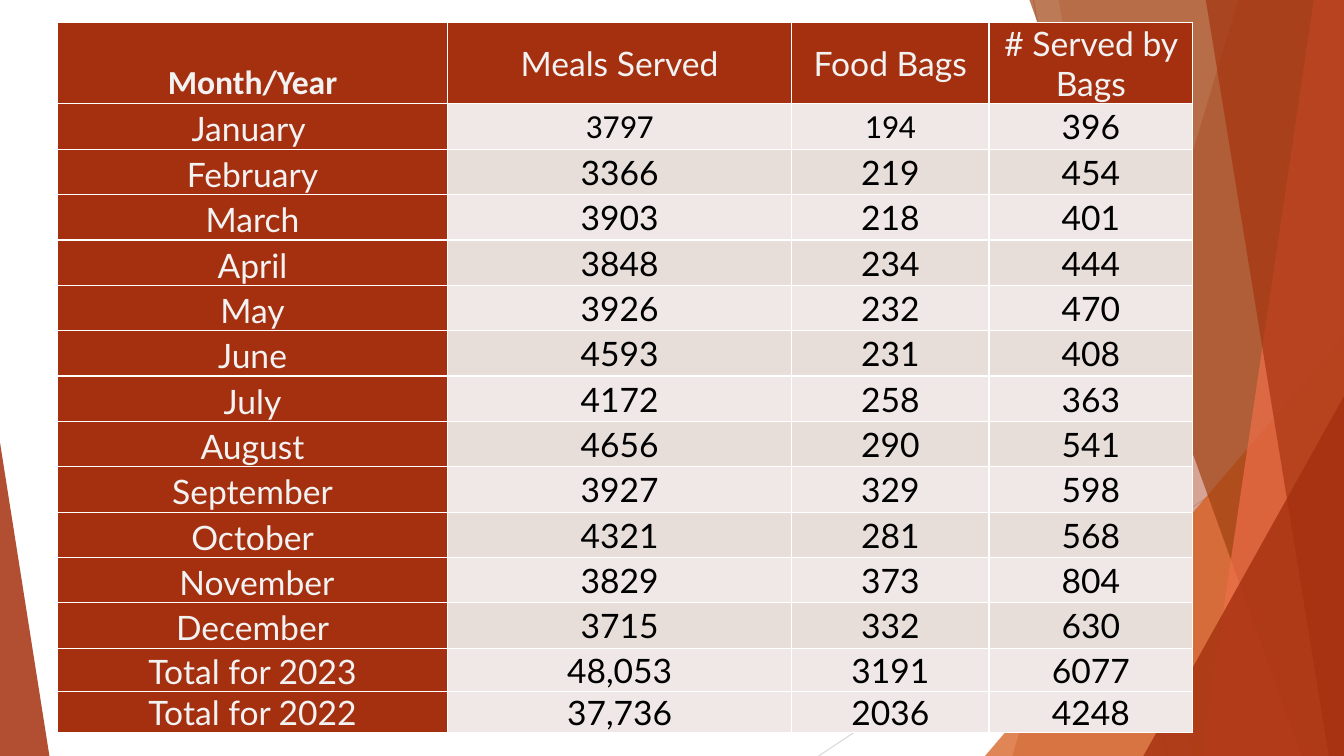
from lxml import etree
from pptx import Presentation
from pptx.dml.color import RGBColor
from pptx.enum.shapes import MSO_CONNECTOR, MSO_SHAPE
from pptx.enum.text import MSO_ANCHOR, PP_ALIGN
from pptx.oxml.ns import qn
from pptx.util import Inches, Pt

STRAIGHT, TRIANGLE = MSO_CONNECTOR.STRAIGHT, MSO_SHAPE.ISOSCELES_TRIANGLE
CENTER = PP_ALIGN.CENTER
BOTTOM, MIDDLE = MSO_ANCHOR.BOTTOM, MSO_ANCHOR.MIDDLE

# Content
HEADERS = ("Month/Year", "Meals Served", "Food Bags", "# Served by Bags")
MONTHS = [
    ("January ", "3797", "194", "396"),
    ("February", "3366", "219", "454"),
    ("March", "3903", "218", "401"),
    ("April", "3848", "234", "444"),
    ("May", "3926", "232", "470"),
    ("June", "4593", "231", "408"),
    ("July", "4172", "258", "363"),
    ("August", "4656", "290", "541"),
    ("September", "3927", "329", "598"),
    ("October", "4321", "281", "568"),
    (" November", "3829", "373", "804"),
    ("December", "3715", "332", "630"),
]
TOTALS = [
    ("Total for 2023", "48,053", "3191", "6077"),
    ("Total for 2022", "37,736", "2036", "4248"),
]
CALIBRI_CELLS = {"Month/Year", "3797", "194"}

THEME = {
    "rust": "A5300F", "orange": "D55816", "brown": "A04210", "coral": "EE6E4A",
    "light": "F2F2F2", "dark": "000000", "border": "FFFFFF",
    "bands": ("F0E8E7", "E7DEDA"),
    "font": "Lato", "accent_font": "Calibri", "size": 24,
}

# Layout in inches
WIDTH, HEIGHT = 13.33, 7.5
TABLE_LEFT, TABLE_TOP = 0.57, 0.22
COLUMN_WIDTHS = (3.87, 3.41, 1.96, 2.02)
ROW_HEIGHTS = [0.74] + [0.45] * len(MONTHS) + [0.43, 0.22]
INSETS = {"margin_left": 0.01, "margin_top": 0.01, "margin_right": 0.01, "margin_bottom": 0}

# Background: thin lines, then facets from back to front
LINES = [((10.25, 0), (11.58, HEIGHT), "BFBFBF"),
         ((WIDTH, 4.03), (8.12, HEIGHT), "D9D9D9")]
# Right-edge facets: (top x, bottom x); triangles: (left, top, width, apex)
FACETS = [
    ("band", (12.28, 10.04), "rust", 30),
    ("band", (10.5, 11.83), "rust", 20),
    ("triangle", (9.77, 3.33, 3.56, 1), "orange", 72),
    ("band", (10.21, 12.91), "brown", 70),
    ("band", (13.03, 11.92), "coral", 70),
    ("band", (11.96, 13.18), "rust", 65),
    ("triangle", (11.34, 3.93, 1.99, 1), "rust", 80),
    ("triangle", (0, 4.39, 0.49, 0), "rust", 85),
]


def color(name):
    return RGBColor.from_string(THEME.get(name, name))


def add_line(slide, start, end, line_color):
    points = [Inches(value) for value in (*start, *end)]
    line = slide.shapes.add_connector(STRAIGHT, *points)
    line.line.color.rgb = color(line_color)
    line.line.width = Pt(0.75)
    etree.SubElement(line._element.spPr, qn("a:effectLst"))


def add_facet(slide, kind, geometry, fill, opacity):
    if kind == "band":
        top_x, bottom_x = geometry
        corners = [(WIDTH, 0), (WIDTH, HEIGHT), (bottom_x, HEIGHT)]
        builder = slide.shapes.build_freeform(Inches(top_x), 0)
        builder.add_line_segments([(Inches(x), Inches(y)) for x, y in corners], close=True)
        shape = builder.convert_to_shape()
    else:
        left, top, width, apex = geometry
        box = [Inches(value) for value in (left, top, width, HEIGHT - top)]
        shape = slide.shapes.add_shape(TRIANGLE, *box)
        shape.adjustments[0] = apex
    shape.shadow.inherit = False
    shape.line.fill.background()
    shape.fill.solid()
    shape.fill.fore_color.rgb = color(fill)
    tint = shape._element.spPr.find(qn("a:solidFill"))[0]
    etree.SubElement(tint, qn("a:alpha"), val=str(opacity * 1000))


def add_borders(cell):
    properties = cell._tc.get_or_add_tcPr()
    for side in ("lnL", "lnR", "lnT", "lnB"):
        border = etree.SubElement(properties, qn(f"a:{side}"), w=str(Pt(1)))
        fill = etree.SubElement(border, qn("a:solidFill"))
        etree.SubElement(fill, qn("a:srgbClr"), val=THEME["border"])


def format_cell(cell, text, row, column):
    labelled = row == 0 or column == 0
    # Both total rows share the first band colour
    band = THEME["bands"][(row - 1) % 2 if row <= len(MONTHS) else 0]
    add_borders(cell)
    cell.fill.solid()
    cell.fill.fore_color.rgb = color("rust" if labelled else band)
    for name, value in INSETS.items():
        setattr(cell, name, Inches(value))
    cell.vertical_anchor = BOTTOM if column == 0 else MIDDLE
    paragraph = cell.text_frame.paragraphs[0]
    paragraph.alignment = CENTER
    run = paragraph.add_run()
    run.text = text
    font_format = {
        "name": THEME["accent_font" if text in CALIBRI_CELLS else "font"],
        "size": Pt(THEME["size"]),
        "bold": row == 0 and column == 0,
    }
    for name, value in font_format.items():
        setattr(run.font, name, value)
    run.font.color.rgb = color("light" if labelled else "dark")


def add_meals_table(slide):
    rows = [HEADERS, *MONTHS, *TOTALS]
    box = (TABLE_LEFT, TABLE_TOP, sum(COLUMN_WIDTHS), sum(ROW_HEIGHTS))
    frame = slide.shapes.add_table(len(rows), len(HEADERS), *[Inches(value) for value in box])
    table = frame.table
    for column, width in zip(table.columns, COLUMN_WIDTHS):
        column.width = Inches(width)
    for row, height in zip(table.rows, ROW_HEIGHTS):
        row.height = Inches(height)
    for row, texts in enumerate(rows):
        for column, text in enumerate(texts):
            format_cell(table.cell(row, column), text, row, column)


def main():
    presentation = Presentation()
    presentation.slide_width, presentation.slide_height = Inches(WIDTH), Inches(HEIGHT)
    slide = presentation.slides.add_slide(presentation.slide_layouts[6])
    for line in LINES:
        add_line(slide, *line)
    for facet in FACETS:
        add_facet(slide, *facet)
    add_meals_table(slide)
    presentation.save("out.pptx")


if __name__ == "__main__":
    main()
